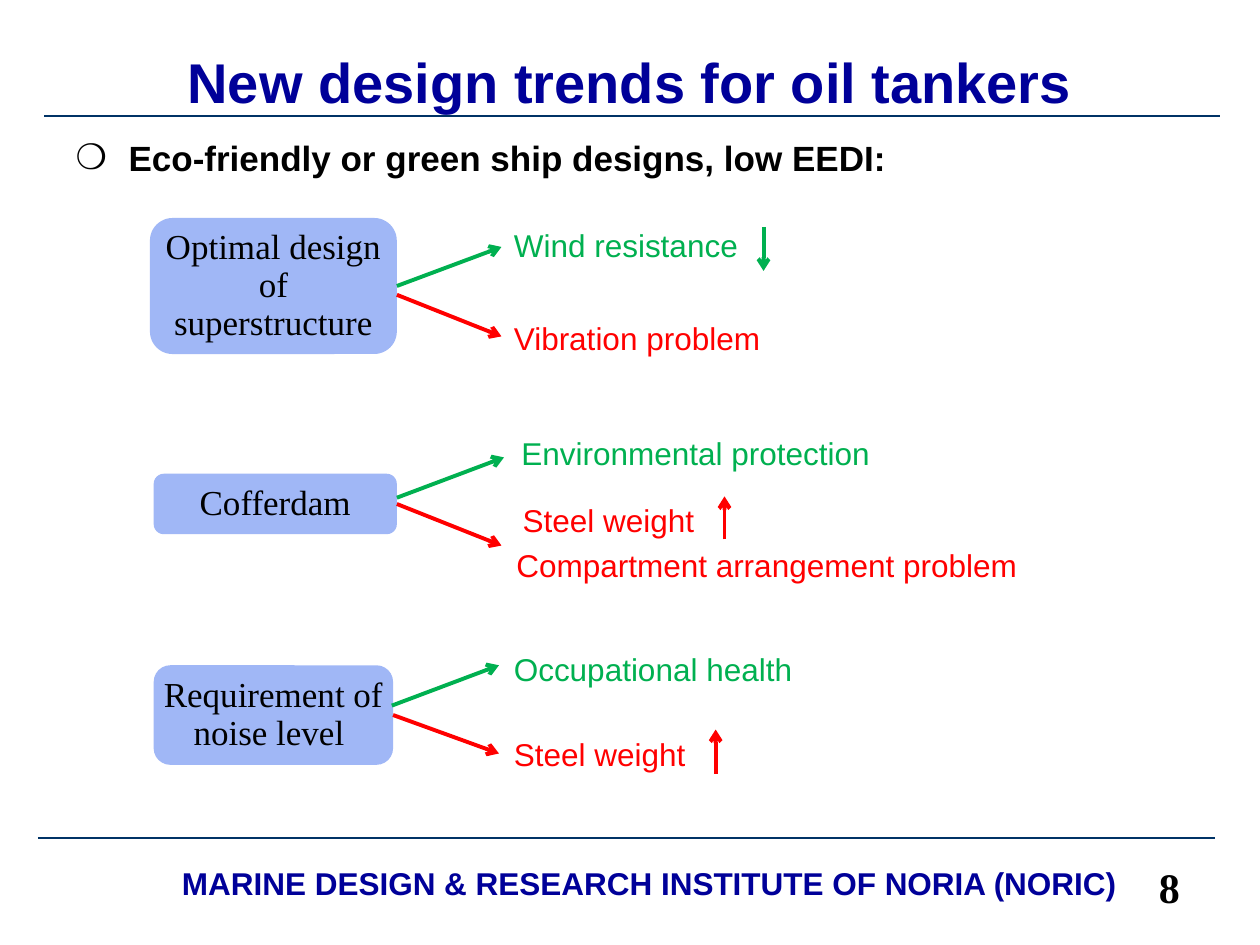
from dataclasses import dataclass

from lxml import etree
from pptx import Presentation
from pptx import util as u
from pptx.dml.color import RGBColor
from pptx.enum import shapes, text
from pptx.oxml.ns import qn


@dataclass(frozen=True)
class Theme:
    navy: str = "000099"
    rule: str = "003366"
    box: str = "A0B7F6"
    gain: str = "00B050"
    loss: str = "FF0000"
    ink: str = "000000"
    sans: str = "Arial"
    serif: str = "Times New Roman"
    title: int = 32
    number: int = 24
    body: int = 20
    label: int = 18


class Page:
    """Draws on a grid of 100 columns by 75 rows."""

    def __init__(self, prs, theme):
        self.t = theme
        self.cell = prs.slide_width / 100
        self.s = prs.slides.add_slide(prs.slide_layouts[1])

    def grid(self, *values):
        return [u.Emu(round(v * self.cell)) for v in values]

    def set_text(self, sp, words, size, colour, font=None, bold=False,
                 align=text.PP_ALIGN.LEFT, spacing=0.9, anchor=text.MSO_ANCHOR.TOP):
        tf = sp.text_frame
        tf.word_wrap = True
        tf.auto_size = text.MSO_AUTO_SIZE.NONE
        tf.vertical_anchor = anchor
        p = tf.paragraphs[0]
        p.alignment, p.line_spacing, p.space_before = align, spacing, u.Pt(0)
        r = p.add_run()
        r.text = words
        r.font.name, r.font.size, r.font.bold = font or self.t.sans, u.Pt(size), bold
        r.font.color.rgb = RGBColor.from_string(colour)
        return p

    def place(self, sp, *area):
        sp.left, sp.top, sp.width, sp.height = self.grid(*area)

    def title(self, words, *area):
        sp = self.s.shapes.title
        self.place(sp, *area)
        self.set_text(sp, words, self.t.title, self.t.navy, bold=True, spacing=1.0,
                      align=text.PP_ALIGN.CENTER, anchor=text.MSO_ANCHOR.BOTTOM)
        sp.text_frame.margin_bottom = 0

    def bullet(self, words, *area):
        sp = self.s.placeholders[1]
        self.place(sp, *area)
        p = self.set_text(sp, words, self.t.body, self.t.ink, bold=True)
        pPr = p._p.get_or_add_pPr()
        indent = self.grid(4.2)[0]
        pPr.set("marL", str(indent))
        pPr.set("indent", str(-indent))
        etree.SubElement(pPr, qn("a:buChar")).set("char", "❍")

    def label(self, words, area, size, colour, **style):
        sp = self.s.shapes.add_textbox(*self.grid(*area))
        self.set_text(sp, words, size, colour, **style)

    def box(self, words, area):
        sp = self.s.shapes.add_shape(shapes.MSO_SHAPE.ROUNDED_RECTANGLE, *self.grid(*area))
        sp.shadow.inherit = False
        sp.fill.solid()
        sp.fill.fore_color.rgb = RGBColor.from_string(self.t.box)
        sp.line.fill.background()
        self.set_text(sp, words, self.t.body, self.t.ink, font=self.t.serif,
                      align=text.PP_ALIGN.CENTER, anchor=text.MSO_ANCHOR.MIDDLE)
        sp.text_frame.margin_left = sp.text_frame.margin_right = u.Inches(0.04)
        return sp

    def line(self, ends, colour, width=1.0):
        sp = self.s.shapes.add_connector(shapes.MSO_CONNECTOR.STRAIGHT, *self.grid(*ends))
        sp.line.width = u.Pt(width)
        sp.line.color.rgb = RGBColor.from_string(colour)
        etree.SubElement(sp._element.spPr, qn("a:effectLst"))
        return sp

    def arrow(self, ends, colour, source=None):
        sp = self.line(ends, colour, 2.25)
        ln = sp._element.spPr.find(qn("a:ln"))
        etree.SubElement(ln, qn("a:tailEnd")).set("type", "arrow")
        if source is not None:
            sp.begin_connect(source, 3)


def main():
    t = Theme()
    prs = Presentation()
    prs.slide_width, prs.slide_height = u.Inches(10), u.Inches(7.5)
    page = Page(prs, t)

    # Rules and footer
    page.line((3, 66.5, 96.4, 66.5), t.rule)
    page.line((3.5, 9.2, 96.8, 9.2), t.rule)
    page.label("MARINE DESIGN & RESEARCH INSTITUTE OF NORIA (NORIC)",
               (11.4, 68.7, 80.3, 3.4), t.label, t.navy, bold=True,
               spacing=0.8, align=text.PP_ALIGN.CENTER)
    page.label("8", (91, 68.3, 6.3, 4.6), t.number, t.ink, font=t.serif, bold=True)

    # Title and lead bullet
    page.title("New design trends for oil tankers", 5, 3, 90, 6.1)
    page.bullet("Eco-friendly or green ship designs, low EEDI:", 5, 10.7, 89.9, 3.9)

    # Each measure: box, then arrows to its gain and loss (True joins the box)
    measures = [
        ("Optimal design of superstructure", (11.9, 17.3, 19.6, 10.8),
         [((31.2, 22.8, 39.8, 19.6), t.gain, True),
          ((31.5, 23.4, 39.8, 26.7), t.loss, False)]),
        ("Cofferdam", (12.2, 37.6, 19.3, 4.8),
         [((31.5, 39.5, 40, 36.3), t.gain, False),
          ((31.6, 40, 39.8, 43.3), t.loss, True)]),
        ("Requirement of noise level ", (12.2, 52.8, 19, 7.9),
         [((31.1, 56, 39.6, 52.8), t.gain, False),
          ((31.4, 56.5, 39.6, 59.8), t.loss, True)]),
    ]
    for words, area, arrows in measures:
        sp = page.box(words, area)
        for ends, colour, joined in arrows:
            page.arrow(ends, colour, sp if joined else None)

    # Effects
    effects = [
        ("Wind resistance", 39.8, 17.8, t.gain),
        ("Vibration problem", 39.8, 25.2, t.loss),
        ("Environmental protection", 40.4, 34.3, t.gain),
        ("Steel weight", 40.5, 39.6, t.loss),
        ("Compartment arrangement problem", 40, 43.2, t.loss),
        ("Occupational health", 39.8, 51.4, t.gain),
        ("Steel weight", 39.8, 58.2, t.loss),
    ]
    for words, col, row, colour in effects:
        page.label(words, (col, row, 43, 3.7), t.label, colour)

    # Rise and fall marks
    for col, start, end, colour in [(60.6, 18, 21.5, t.gain),
                                    (57.5, 42.8, 39.4, t.loss),
                                    (56.8, 61.4, 57.9, t.loss)]:
        page.arrow((col, start, col, end), colour)

    prs.save("out.pptx")


if __name__ == "__main__":
    main()
